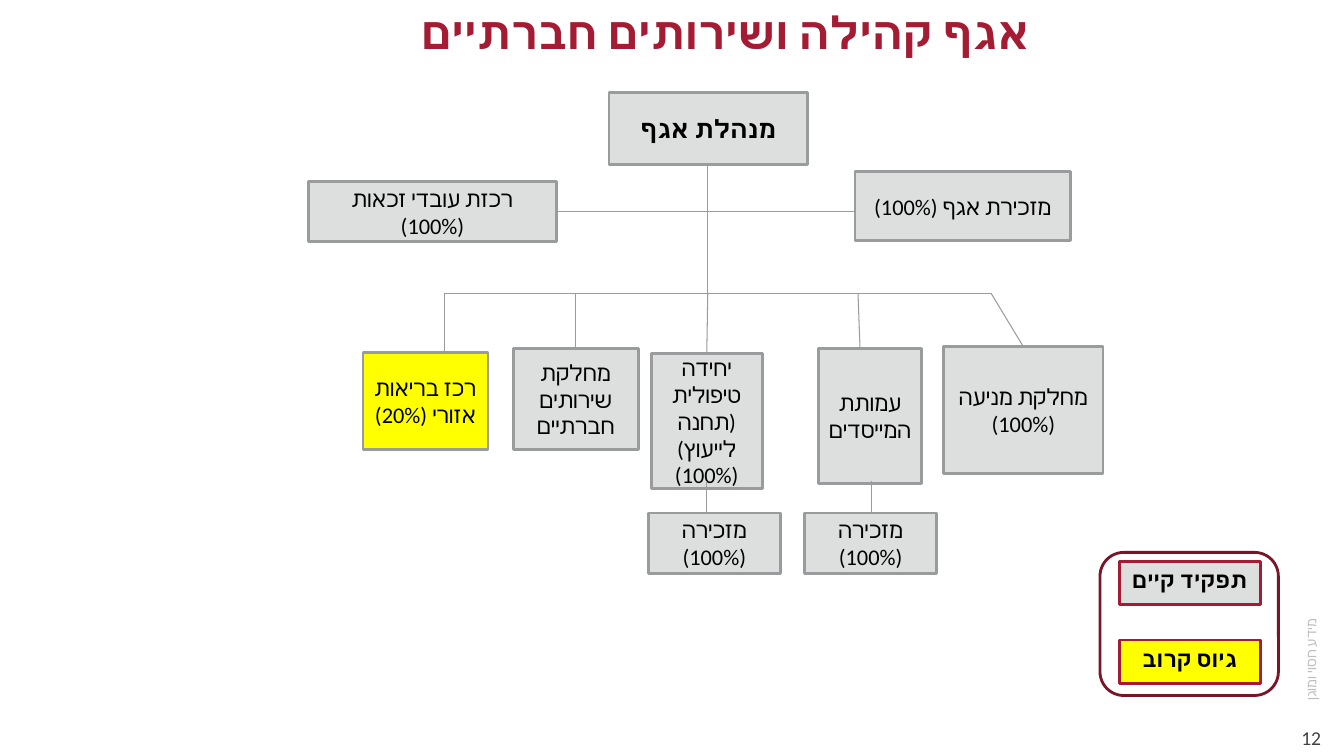
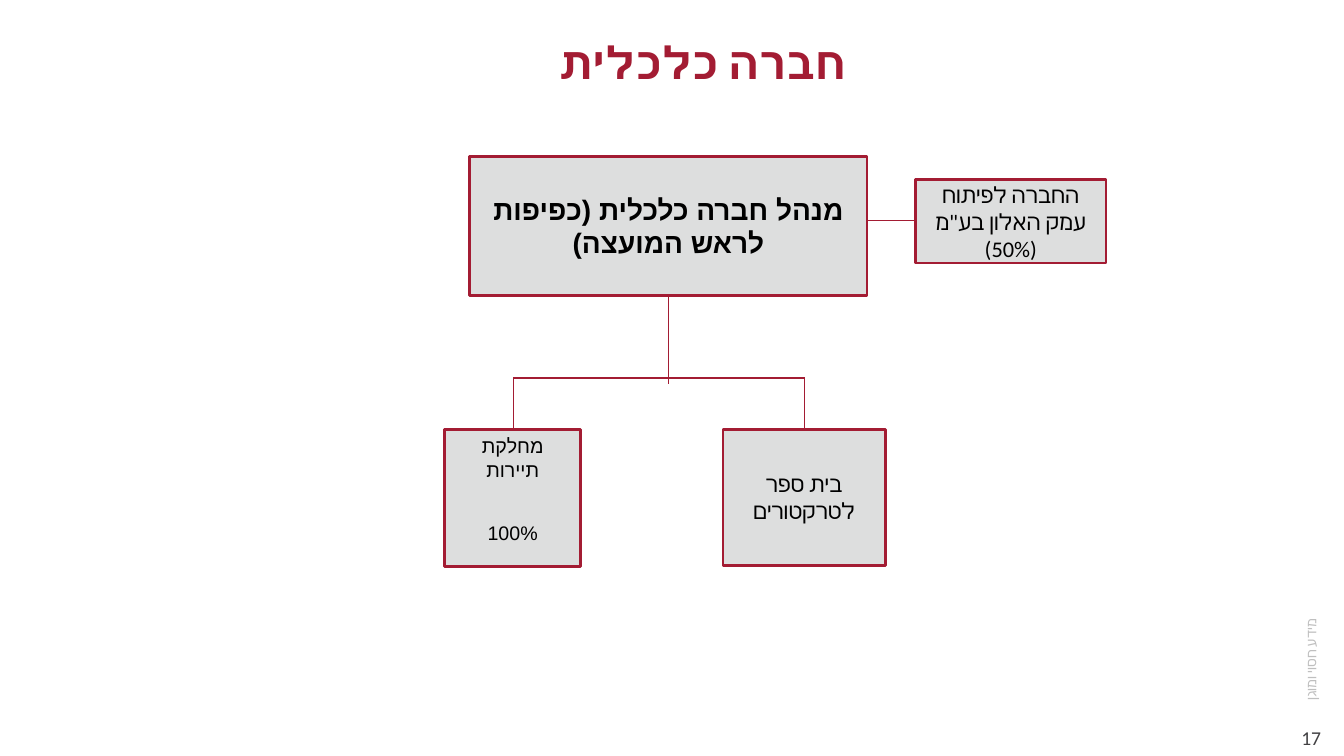
import pptx
import pptx.util
import pptx.dml.color
import pptx.enum.shapes
import pptx.enum.text
import pptx.oxml
import pptx.oxml.ns
from pptx.util import Inches

CRIMSON, WINE, GREY_LINE = "A31C33", "791526", "9A9B9D"
EXISTING, HIRING = "DDDEDE", "FFFF00"
BLACK, PAGE_GREY, SIDE_GREY = "000000", "414042", "BFBFBF"
TOP, MIDDLE = pptx.enum.text.MSO_ANCHOR.TOP, pptx.enum.text.MSO_ANCHOR.MIDDLE
SHAPES = pptx.enum.shapes.MSO_SHAPE
SIDE_NOTE = "מידע חסוי ומוגן"

BUS = 2.91
STAFF = 2.1
SECRETARY = 5.09
SECRETARIES = [(6.43, 7.01), (7.98, 8.64)]

CHARTS = [
    {
        "title": "אגף קהילה ושירותים חברתיים", "title_at": (3.73, 0), "page": "12",
        "line": GREY_LINE,
        "boxes": [
            {"at": (6.04, 0.92, 1.97, 0.71), "text": ["מנהלת אגף"], "size": 18, "bold": True},
            {"at": (8.48, 1.7, 2.14, 0.69), "text": ["מזכירת אגף (100%)"]},
            {"at": (3.06, 1.8, 2.46, 0.6), "text": ["רכזת עובדי זכאות", "(100%)"]},
            {"at": (3.6, 3.5, 1.24, 0.96), "text": ["רכז בריאות אזורי (20%)"], "fill": HIRING},
            {"at": (5.09, 3.46, 1.24, 1), "text": ["מחלקת שירותים חברתיים"]},
            {"at": (6.46, 3.51, 1.1, 1.34), "text": ["יחידה טיפולית", "(תחנה לייעוץ) (100%)"]},
            {"at": (8.12, 3.46, 1.02, 1.34), "text": ["עמותת המייסדים"]},
            {"at": (9.36, 3.44, 1.58, 1.26), "text": ["מחלקת מניעה (100%)"]},
        ] + [
            {"at": (left, SECRETARY, 1.31, 0.6), "text": ["מזכירה (100%)"]}
            for left, stem in SECRETARIES
        ],
        "lines": [
            (7.02, 1.63, 7.02, BUS),
            (5.52, STAFF, 8.48, STAFF),
            (4.41, BUS, 9.83, BUS),
            (4.41, BUS, 4.41, 3.5),
            (5.71, BUS, 5.71, 3.46),
            (7.02, BUS, 7.01, 3.51),
            (8.51, BUS, 8.53, 3.46),
            (9.83, BUS, 10.15, 3.44),
        ] + [(stem, 4.77, stem, SECRETARY) for left, stem in SECRETARIES],
        "legend": [("תפקיד קיים", EXISTING), ("גיוס קרוב", HIRING)],
    },
    {
        "title": "חברה כלכלית", "title_at": (3.5, 0.3), "page": "17",
        "line": CRIMSON,
        "boxes": [
            {"at": (4.66, 1.55, 3.94, 1.38), "text": ["מנהל חברה כלכלית (כפיפות לראש המועצה)"],
             "size": 20, "bold": True, "font": "Arial"},
            {"at": (9.08, 1.78, 1.89, 0.83), "text": ["החברה לפיתוח עמק האלון בע\"מ (50%)"]},
            {"at": (4.41, 4.26, 1.35, 1.36), "text": ["מחלקת תיירות", "100%"],
             "size": 14, "font": "Arial", "anchor": TOP, "after": 28},
            {"at": (7.17, 4.26, 1.61, 1.35), "text": ["בית ספר לטרקטורים"]},
        ],
        "lines": [
            (6.63, 2.93, 6.63, 3.81),
            (5.09, 3.75, 7.98, 3.75),
            (5.09, 3.75, 5.09, 4.26),
            (7.98, 3.75, 7.98, 4.26),
            (8.6, 2.19, 9.08, 2.19),
        ],
        "legend": [],
    },
]


def color(value):
    return pptx.dml.color.RGBColor.from_string(value)


def write(shape, texts, size, ink=BLACK, bold=False, font="Calibri", anchor=MIDDLE, after=0):
    frame = shape.text_frame
    frame.word_wrap = True
    frame.vertical_anchor = anchor
    frame.margin_left = frame.margin_right = Inches(0.08)
    for index, text in enumerate(texts):
        paragraph = frame.add_paragraph() if index else frame.paragraphs[0]
        paragraph.alignment = pptx.enum.text.PP_ALIGN.CENTER
        paragraph.space_after = pptx.util.Pt(after)
        paragraph._p.get_or_add_pPr().set("rtl", "1")
        run = paragraph.add_run()
        run.text = text
        run.font.size = pptx.util.Pt(size)
        run.font.bold = bold
        run.font.color.rgb = color(ink)
        run.font.name = font
        complex_font = pptx.oxml.parse_xml(
            f'<a:cs {pptx.oxml.ns.nsdecls("a")} typeface="{font}"/>')
        run._r.get_or_add_rPr().append(complex_font)


def add_label(slide, at, text, size, ink, **style):
    label = slide.shapes.add_textbox(*map(Inches, at))
    write(label, [text], size, ink, **style)
    return label


def add_panel(slide, kind, at, fill, line):
    panel = slide.shapes.add_shape(kind, *map(Inches, at))
    panel.shadow.inherit = False
    if fill:
        panel.fill.solid()
        panel.fill.fore_color.rgb = color(fill)
    else:
        panel.fill.background()
    panel.line.color.rgb = color(line)
    panel.line.width = pptx.util.Pt(2)
    return panel


def add_box(slide, line, at, text, fill=EXISTING, size=16, **style):
    box = add_panel(slide, SHAPES.RECTANGLE, at, fill, line)
    write(box, text, size, **style)


def add_line(slide, ends, line):
    connector = slide.shapes.add_connector(
        pptx.enum.shapes.MSO_CONNECTOR.STRAIGHT, *map(Inches, ends))
    connector.line.color.rgb = color(line)
    connector.line.width = pptx.util.Pt(0.75)
    connector._element.spPr.append(
        pptx.oxml.parse_xml(f'<a:effectLst {pptx.oxml.ns.nsdecls("a")}/>'))


def add_legend(slide, entries):
    for index, (text, fill) in enumerate(entries):
        add_box(slide, CRIMSON, (11.1, 5.57 + index * 0.78, 1.4, 0.43), [text], fill,
                bold=True, anchor=TOP)
    add_panel(slide, SHAPES.ROUNDED_RECTANGLE, (10.91, 5.48, 1.77, 1.42), None, WINE)


def add_chart_slide(presentation, chart):
    slide = presentation.slides.add_slide(presentation.slide_layouts[6])
    add_label(slide, (12.39, 6.37, 1.22, 0.35), SIDE_NOTE, 10, SIDE_GREY).rotation = 270
    add_label(slide, (12.68, 7.15, 0.65, 0.16), chart["page"], 14, PAGE_GREY, anchor=TOP)
    add_label(slide, (*chart["title_at"], 6.93, 0.64), chart["title"], 32, CRIMSON,
              bold=True, anchor=TOP)
    for box in chart["boxes"]:
        add_box(slide, chart["line"], **box)
    for ends in chart["lines"]:
        add_line(slide, ends, chart["line"])
    if chart["legend"]:
        add_legend(slide, chart["legend"])


def main():
    presentation = pptx.Presentation()
    presentation.slide_width = Inches(13.33)
    presentation.slide_height = Inches(7.5)
    for chart in CHARTS:
        add_chart_slide(presentation, chart)
    presentation.save("out.pptx")


if __name__ == "__main__":
    main()
